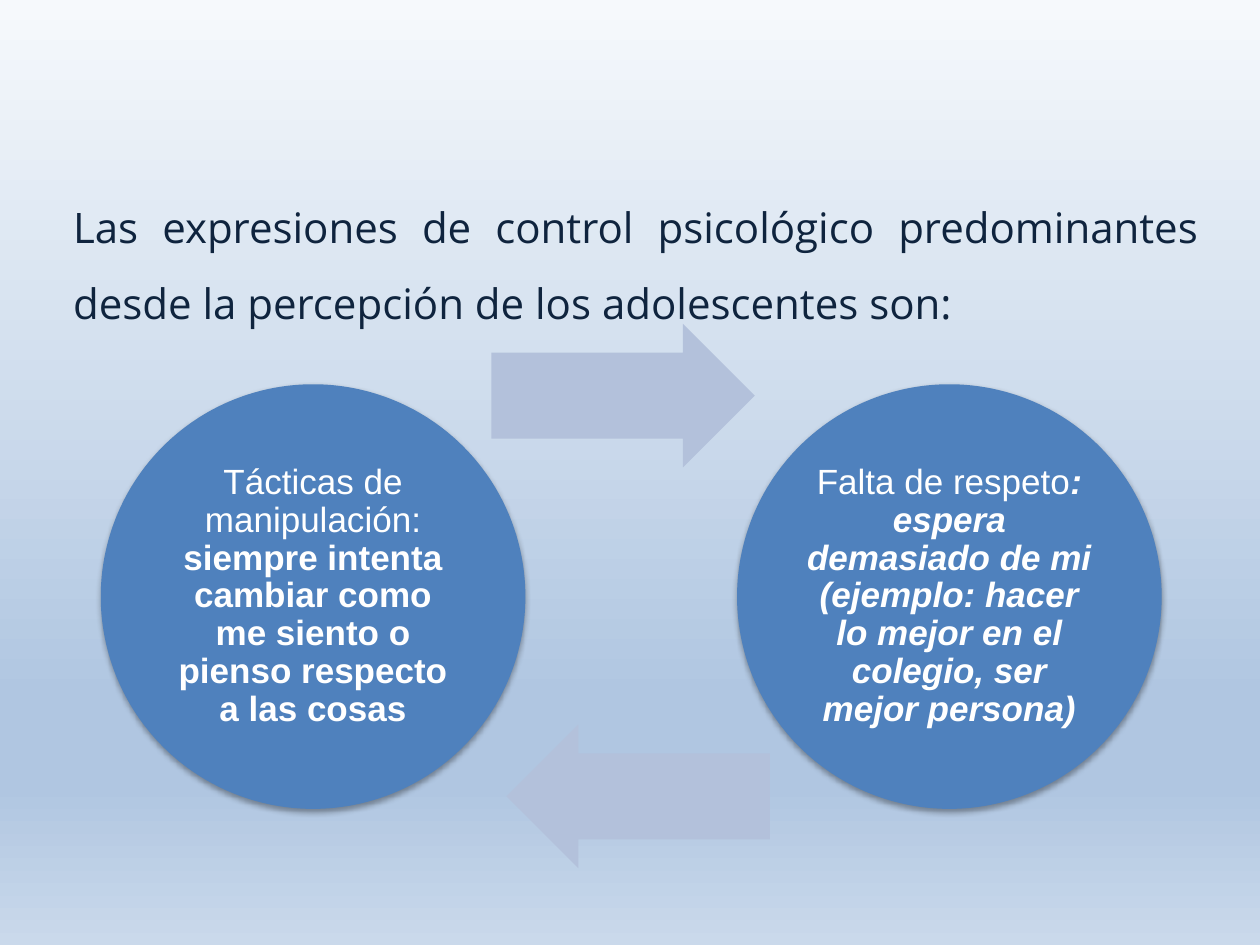
from dataclasses import dataclass

from lxml import etree
from pptx import Presentation
from pptx.dml.color import RGBColor
from pptx.enum.shapes import MSO_SHAPE as Shape
from pptx.enum.text import MSO_ANCHOR as Anchor, MSO_AUTO_SIZE as AutoSize, PP_ALIGN as Align
from pptx.oxml.ns import qn
from pptx.util import Pt


@dataclass(frozen=True)
class Theme:
    background: tuple = ((0, "F6F9FC"), (74, "B0C6E1"), (83, "B0C6E1"), (100, "CAD9EB"))
    circle: str = "4F81BD"
    arrow: str = "B3C1DB"
    shadow: str = "000000"
    intro_text: str = "0F243E"
    circle_text: str = "FFFFFF"
    intro_font: str = "Open Sans"
    circle_font: str = "Arial"
    intro_size: int = 24
    circle_size: int = 20


theme = Theme()


def add_flat_shape(kind, left, top, width, height, colour):
    """Add a preset shape with a solid fill, no line and no shadow."""
    shape = slide.shapes.add_shape(kind, Pt(left), Pt(top), Pt(width), Pt(height))
    shape.shadow.inherit = False
    shape.fill.solid()
    shape.fill.fore_color.rgb = RGBColor.from_string(colour)
    shape.line.fill.background()
    return shape


def add_run(paragraph, text, font, size, colour, bold=False, italic=False):
    run = paragraph.add_run()
    run.text = text
    run.font.name = font
    run.font.size = Pt(size)
    run.font.bold = bold
    run.font.italic = italic
    run.font.color.rgb = RGBColor.from_string(colour)


prs = Presentation()
prs.slide_width, prs.slide_height = Pt(720), Pt(540)
slide = prs.slides.add_slide(prs.slide_layouts.get_by_name("Title and Content"))

# Background gradient, from top to bottom
fill = slide.background.fill
fill.gradient()
fill.gradient_angle = 270
stops = slide.element.find(".//" + qn("a:gsLst"))
for stop in list(stops):
    stops.remove(stop)
for percent, colour in theme.background:
    stop = etree.SubElement(stops, qn("a:gs"), pos=str(percent * 1000))
    etree.SubElement(stop, qn("a:srgbClr"), val=colour)

# Introduction in the body placeholder
title = slide.shapes.title.element
title.getparent().remove(title)
intro = slide.placeholders[1]
intro.left, intro.top, intro.width, intro.height = Pt(30.24), Pt(97.2), Pt(661.68), Pt(427.68)
intro.text_frame.auto_size = AutoSize.NONE
sentence = intro.text_frame.paragraphs[0]
properties = sentence._p.get_or_add_pPr()
properties.set("marL", str(Pt(4.32)))
properties.set("indent", "0")
etree.SubElement(properties, qn("a:buNone"))
sentence.alignment = Align.JUSTIFY
sentence.line_spacing = 1.5
sentence.space_before = Pt(0)
add_run(
    sentence,
    "Las expresiones de control psicológico predominantes desde la percepción de los adolescentes son:",
    theme.intro_font, theme.intro_size, theme.intro_text,
)

# Cycle: each circle is followed by the arrow that leaves it
DIAMETER, CIRCLE_TOP = 242.64, 219.6
ARROW_WIDTH, ARROW_HEIGHT = 150.48, 82.08
INSET = Pt(2.16)
cycle = [
    (57.6, "Tácticas de manipulación: ",
     "siempre intenta cambiar como me siento o pienso respecto a las cosas",
     False, (280.8, 185.04, 0)),
    (421.2, "Falta de respeto",
     ": espera demasiado de mi (ejemplo: hacer lo mejor en el colegio, ser mejor persona)",
     True, (289.44, 414, 180)),
]
for circle_left, expression, example, italic, (arrow_left, arrow_top, rotation) in cycle:
    circle = add_flat_shape(Shape.OVAL, circle_left, CIRCLE_TOP, DIAMETER, DIAMETER, theme.circle)
    shadow = etree.SubElement(
        circle.element.spPr.find(qn("a:effectLst")), qn("a:outerShdw"),
        blurRad=str(Pt(3.1)), dist=str(Pt(1.8)), dir="5400000", rotWithShape="0",
    )
    shadow_colour = etree.SubElement(shadow, qn("a:srgbClr"), val=theme.shadow)
    etree.SubElement(shadow_colour, qn("a:alpha"), val="35000")

    frame = circle.text_frame
    frame.word_wrap = True
    frame.vertical_anchor = Anchor.MIDDLE
    frame.margin_left = frame.margin_right = frame.margin_top = frame.margin_bottom = INSET
    description = frame.paragraphs[0]
    description.alignment = Align.CENTER
    description.line_spacing = 0.9
    circle_style = theme.circle_font, theme.circle_size, theme.circle_text
    add_run(description, expression, *circle_style)
    add_run(description, example, *circle_style, bold=True, italic=italic)

    arrow = add_flat_shape(
        Shape.RIGHT_ARROW, arrow_left, arrow_top, ARROW_WIDTH, ARROW_HEIGHT, theme.arrow
    )
    arrow.adjustments[0], arrow.adjustments[1] = 0.6, 0.5
    arrow.rotation = rotation

prs.save("out.pptx")
